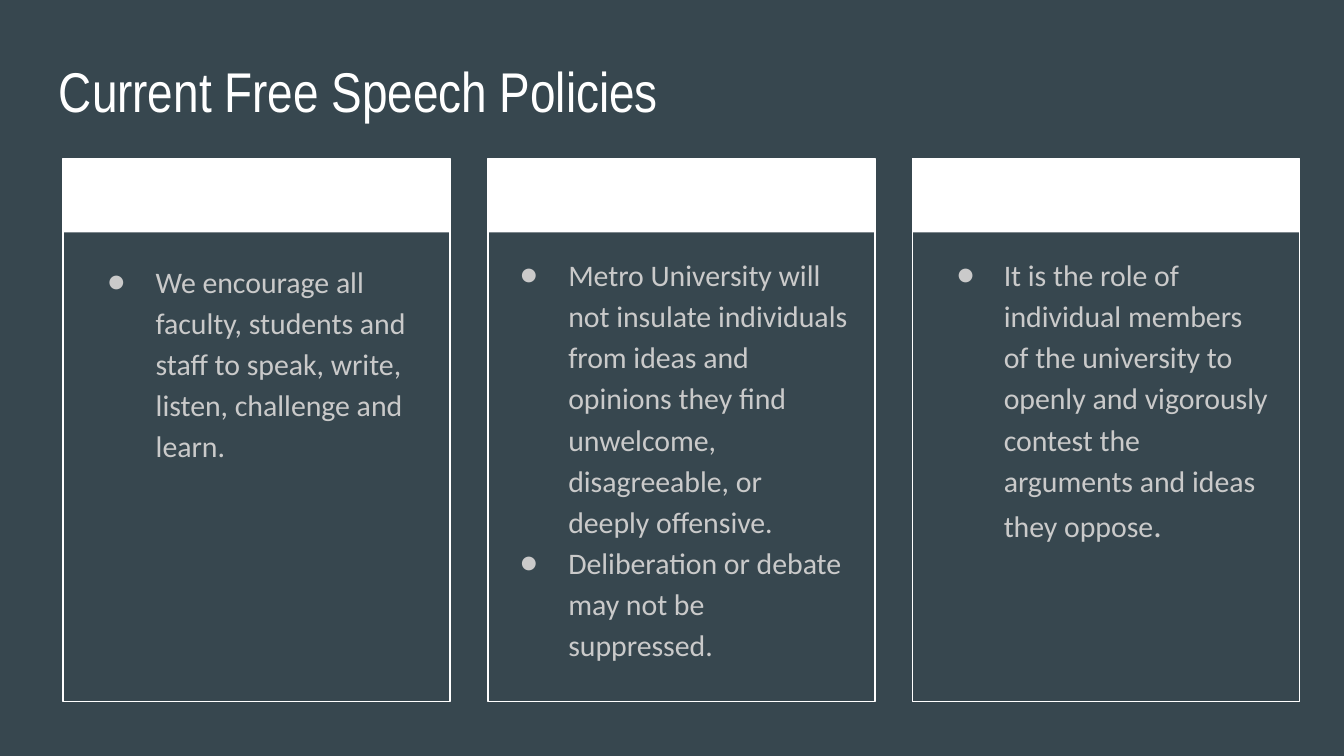
import pptx
import pptx.dml.color
import pptx.enum.shapes
import pptx.enum.text
import pptx.oxml
import pptx.oxml.ns
import pptx.util
from dataclasses import dataclass

TITLE = "Current Free Speech Policies"

# Each policy is a list of runs: (text, size role).
# text_at is the offset from the panel's corner, then width and height.
COLUMNS = [
    {"text_at": (0.09, 0.64, 2.71, 3.3), "hang": 0.36, "policies": [
        [("We encourage all faculty, students and staff to speak, write, "
          "listen, challenge and learn.", "body")],
    ]},
    {"text_at": (0, 0.59, 2.79, 3.06), "hang": 0.36, "policies": [
        [("Metro University will not insulate individuals from ideas and "
          "opinions they find unwelcome, disagreeable, or deeply offensive.", "body")],
        [("Deliberation or debate may not be suppressed.", "body")],
    ]},
    {"text_at": (0.08, 0.59, 2.69, 3.06), "hang": 0.35, "policies": [
        [("It is the role of individual members of the university to openly and "
          "vigorously contest the arguments and ideas they oppose", "body"),
         (".", "stop")],
    ]},
]


@dataclass(frozen=True)
class Theme:
    background: str = "37474F"
    panel: str = "FFFFFF"
    title: str = "FFFFFF"
    body: str = "CACACA"
    title_font: str = "Arial Narrow"
    body_font: str = "Calibri"
    title_size: int = 30
    body_size: int = 16
    stop_size: int = 18
    border: float = 0.75


THEME = Theme()
SLIDE_W = 10
SLIDE_H = SLIDE_W * 9 / 16
GRID_LEFT, GRID_TOP = 0.47, 1.18
PANEL_W, PANEL_H, HEADER_H = 2.88, 4.04, 0.55
COLUMN_STEP = PANEL_W + 0.28
INSET = 0.1
BULLET_INDENT = 0.5


def rgb(code):
    return pptx.dml.color.RGBColor.from_string(code)


def inches(*lengths):
    return [pptx.util.Inches(length) for length in lengths]


def add_bullet(paragraph, color, font, hang):
    props = paragraph._p.get_or_add_pPr()
    props.set("marL", str(pptx.util.Inches(BULLET_INDENT)))
    props.set("indent", str(-pptx.util.Inches(hang)))
    namespace = pptx.oxml.ns.nsdecls("a")
    for xml in (f'<a:buClr {namespace}><a:srgbClr val="{color}"/></a:buClr>',
                f'<a:buFont {namespace} typeface="{font}"/>',
                f'<a:buChar {namespace} char="●"/>'):
        props.append(pptx.oxml.parse_xml(xml))


def add_text(slide, paragraphs, at, *, font, color, sizes, spacing=None, hang=None):
    """Add a text box; paragraphs are lists of (text, size role) runs.

    A hang gives each paragraph a bullet, hanging that far left of its text.
    """
    frame = slide.shapes.add_textbox(*inches(*at)).text_frame
    frame.word_wrap = True
    frame.vertical_anchor = pptx.enum.text.MSO_ANCHOR.TOP
    frame.margin_left, frame.margin_top, frame.margin_right, frame.margin_bottom = (
        inches(*[INSET] * 4))
    for index, runs in enumerate(paragraphs):
        paragraph = frame.add_paragraph() if index else frame.paragraphs[0]
        if spacing:
            paragraph.line_spacing = spacing
        if hang:
            add_bullet(paragraph, color, font, hang)
        for text, role in runs:
            run = paragraph.add_run()
            run.text = text
            run.font.name = font
            run.font.size = pptx.util.Pt(sizes[role])
            run.font.color.rgb = rgb(color)


def add_panel(slide, left):
    """Add an outlined panel with a solid header band, as one group."""
    group = slide.shapes.add_group_shape()
    header, outline = (
        group.shapes.add_shape(pptx.enum.shapes.MSO_SHAPE.RECTANGLE,
                               *inches(left, GRID_TOP, PANEL_W, height))
        for height in (HEADER_H, PANEL_H))
    for part in (header, outline):
        part.shadow.inherit = False
    header.fill.solid()
    header.fill.fore_color.rgb = rgb(THEME.panel)
    header.line.fill.background()
    outline.fill.background()
    outline.line.color.rgb = rgb(THEME.panel)
    outline.line.width = pptx.util.Pt(THEME.border)


def main():
    deck = pptx.Presentation()
    deck.slide_width, deck.slide_height = inches(SLIDE_W, SLIDE_H)
    slide = deck.slides.add_slide(deck.slide_layouts[6])
    slide.background.fill.solid()
    slide.background.fill.fore_color.rgb = rgb(THEME.background)

    add_text(slide, [[(TITLE, "title")]], (0.34, 0.32, 9.32, 0.63),
             font=THEME.title_font, color=THEME.title,
             sizes={"title": THEME.title_size})

    for index, column in enumerate(COLUMNS):
        left = GRID_LEFT + index * COLUMN_STEP
        add_panel(slide, left)
        dx, dy, width, height = column["text_at"]
        add_text(slide, column["policies"], (left + dx, GRID_TOP + dy, width, height),
                 font=THEME.body_font, color=THEME.body,
                 sizes={"body": THEME.body_size, "stop": THEME.stop_size},
                 spacing=1.15, hang=column["hang"])

    deck.save("out.pptx")


if __name__ == "__main__":
    main()
